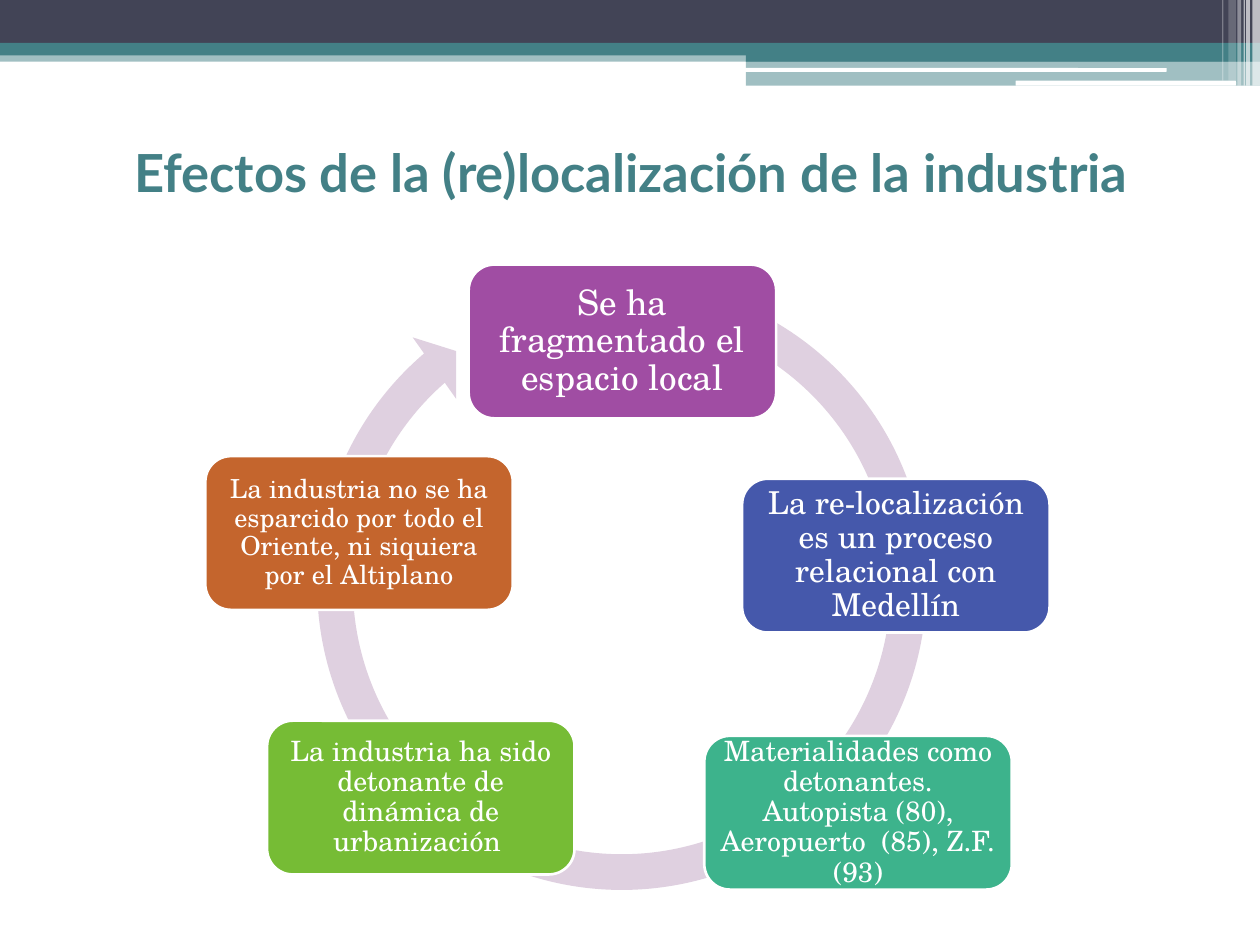
from lxml.etree import SubElement
from pptx import Presentation
from pptx.dml.color import RGBColor
from pptx.enum.shapes import MSO_SHAPE
from pptx.enum.text import MSO_ANCHOR, MSO_AUTO_SIZE, PP_ALIGN
from pptx.oxml.ns import qn
from pptx.util import Inches, Pt

# Content
TITLE = "Efectos de la (re)localización de la industria"
TEAL, NAVY, WHITE, LILAC = "438086", "424456", "FFFFFF", "DFD0E0"

# Cycle steps: left, top, fill, text size, inset, text
STEPS = [
    (3.72, 2.10, "A04DA3", 20, 0.08, "Se ha fragmentado el espacio local"),
    (5.89, 3.80, "4558AB", 18, 0.07,
     "La re-localización es un proceso relacional con Medellín"),
    (5.59, 5.84, "3DB38C", 16, 0.07,
     "Materialidades como detonantes. Autopista (80), Aeropuerto  (85), Z.F. (93)"),
    (2.12, 5.72, "76BC35", 16, 0.07,
     "La industria ha sido detonante de dinámica de urbanización "),
    (1.63, 3.62, "C4652D", 15, 0.06,
     "La industria no se ha esparcido por todo el Oriente, ni siquiera por el Altiplano"),
]
STEP_WIDTH, STEP_HEIGHT = 2.44, 1.22

# Header bands: left, top, width, height, fill, opacity in percent
BANDS = [
    (0, 0.40, 10, 0.09, TEAL, 50),
    (0, 0, 10, 0.34, NAVY, 100),
    (0, 0.34, 10, 0.10, TEAL, 100),
    (5.92, 0.39, 4.08, 0.10, TEAL, 100),
    (5.92, 0.48, 4.08, 0.20, TEAL, 50),
]
# White rounded strips: left, top, width, height
STRIPS = [(5.91, 0.54, 3.35, 0.03), (8.06, 0.64, 1.75, 0.04)]
# Vertical stripes: left, width, height, opacity in percent
STRIPES = [
    (9.94, 0.06, 0.68, 65), (9.89, 0.03, 0.68, 65), (9.87, 0.01, 0.68, 60),
    (9.82, 0.03, 0.68, 40), (9.75, 0.06, 0.64, 20), (9.70, 0.01, 0.64, 30),
]


def color(value):
    return RGBColor.from_string(value)


def add_box(page, kind, left, top, width, height, fill, opacity=100):
    box = page.shapes.add_shape(
        kind, Inches(left), Inches(top), Inches(width), Inches(height))
    box.shadow.inherit = False
    box.fill.solid()
    box.fill.fore_color.rgb = color(fill)
    box.line.fill.background()
    if opacity < 100:
        fill_color = box.fill._xPr.find(qn("a:solidFill"))[0]
        SubElement(fill_color, qn("a:alpha"), val=str(opacity * 1000))
    return box


def write(frame, text, font, size, fill, bold=False):
    frame.word_wrap = True
    frame.auto_size = MSO_AUTO_SIZE.NONE
    frame.vertical_anchor = MSO_ANCHOR.MIDDLE
    para = frame.paragraphs[0]
    para.alignment = PP_ALIGN.CENTER
    span = para.add_run()
    span.text = text
    span.font.name = font
    span.font.size = Pt(size)
    span.font.bold = bold
    span.font.color.rgb = color(fill)
    return para


def add_header(page):
    for left, top, width, height, fill, opacity in BANDS:
        add_box(page, MSO_SHAPE.RECTANGLE, left, top, width, height, fill, opacity)
    for strip in STRIPS:
        add_box(page, MSO_SHAPE.ROUNDED_RECTANGLE, *strip, WHITE)
    for left, width, height, opacity in STRIPES:
        add_box(page, MSO_SHAPE.RECTANGLE, left, 0, width, height, WHITE, opacity)


def add_cycle(page):
    arrow = add_box(page, MSO_SHAPE.CIRCULAR_ARROW, 2.36, 2.07, 5.15, 5.15, LILAC)
    # Thickness, head angle, end angle, start angle, head width
    for index, value in enumerate((0.055, 3.31, 137.53, 174, 0.058)):
        arrow.adjustments[index] = value

    for left, top, fill, size, inset, text in STEPS:
        box = add_box(page, MSO_SHAPE.ROUNDED_RECTANGLE,
                      left, top, STEP_WIDTH, STEP_HEIGHT, fill)
        box.line.color.rgb = color(WHITE)
        box.line.width = Pt(1.5)
        frame = box.text_frame
        frame.margin_left = frame.margin_right = Inches(inset)
        frame.margin_top = frame.margin_bottom = Inches(inset)
        para = write(frame, text, "TeX Gyre Schola", size, WHITE)
        para.line_spacing = 0.9


def main():
    deck = Presentation()
    deck.slide_width, deck.slide_height = Inches(10), Inches(7.5)
    page = deck.slides.add_slide(deck.slide_layouts[5])

    # Title
    title = page.shapes.title
    title.left, title.top = Inches(0.51), Inches(0.78)
    title.width, title.height = Inches(9), Inches(1.17)
    write(title.text_frame, TITLE, "Lato", 30, TEAL, bold=True)

    add_header(page)
    add_cycle(page)
    deck.save("out.pptx")


if __name__ == "__main__":
    main()
